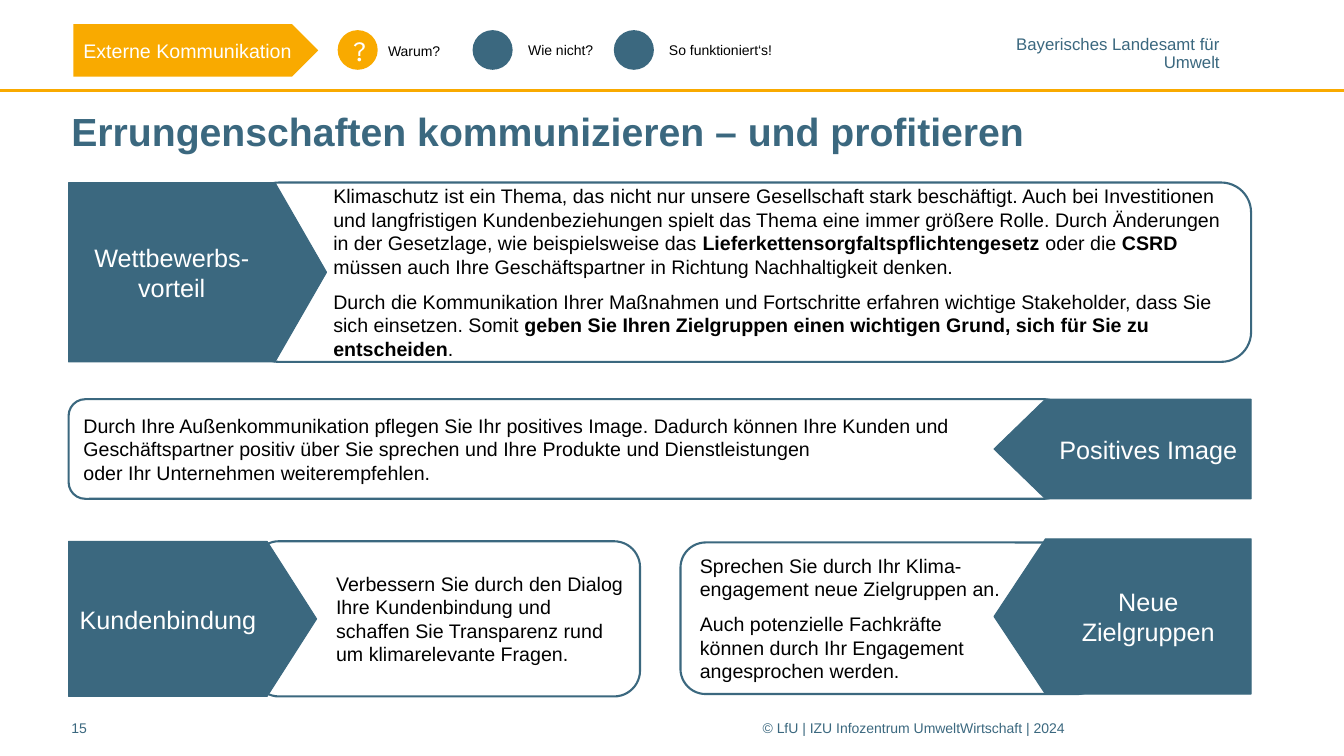
from lxml.etree import SubElement
from pptx import Presentation
from pptx.dml.color import RGBColor
from pptx.enum.shapes import MSO_CONNECTOR, MSO_SHAPE
from pptx.enum.text import MSO_ANCHOR, PP_ALIGN
from pptx.oxml.ns import qn
from pptx.util import Cm, Pt

BLUE = RGBColor(0x3B, 0x68, 0x7F)
GOLD = RGBColor(0xF9, 0xAA, 0x00)
WHITE = RGBColor(0xFF, 0xFF, 0xFF)
BLACK = RGBColor(0, 0, 0)


def write(shape, *lines, size=14, color=BLACK, font="Arial", bold=False,
          align=PP_ALIGN.LEFT, anchor=MSO_ANCHOR.MIDDLE,
          pad=(0.25, 0.13, 0.25, 0.13), after=0, lead=None, wrap=True):
    frame = shape.text_frame
    frame.word_wrap = wrap
    frame.vertical_anchor = anchor
    (frame.margin_left, frame.margin_top,
     frame.margin_right, frame.margin_bottom) = map(Cm, pad)
    for num, line in enumerate(lines):
        para = frame.add_paragraph() if num else frame.paragraphs[0]
        para.alignment = align
        para.space_after = Pt(after)
        para.line_spacing = lead
        for odd, part in enumerate(line.split("**")):
            for row, piece in enumerate(part.split("\n")):
                if row:
                    para.add_line_break()
                run = para.add_run()
                run.text = piece
                run.font.size = Pt(size)
                run.font.name = font
                run.font.bold = bold or odd % 2 == 1
                run.font.color.rgb = color


def label(slide, box, *lines, **style):
    write(slide.shapes.add_textbox(*map(Cm, box)), *lines, **style)


def draw(slide, kind, box, fill=None, line=None, width=1.5):
    shape = slide.shapes.add_shape(kind, *map(Cm, box))
    shape.shadow.inherit = False
    if fill is None:
        shape.fill.background()
    else:
        shape.fill.solid()
        shape.fill.fore_color.rgb = fill
    if line is None:
        shape.line.fill.background()
    else:
        shape.line.color.rgb = line
        shape.line.width = Pt(width)
    return shape


def header(slide, box):
    left, top, wide, high = box
    rule = slide.shapes.add_connector(
        MSO_CONNECTOR.STRAIGHT, Cm(left), Cm(top + high),
        Cm(left + wide), Cm(top + high))
    rule.line.color.rgb = GOLD
    rule.line.width = Pt(2)
    SubElement(rule.element.spPr, qn("a:effectLst"))

    label(slide, (left + 25.58, top + 0.94, 5.16, 0.86),
          "Bayerisches Landesamt für", "Umwelt", size=12, color=BLUE,
          align=PP_ALIGN.RIGHT, anchor=MSO_ANCHOR.TOP, pad=(0, 0, 0, 0),
          lead=0.85, wrap=False)
    flag = draw(slide, MSO_SHAPE.PENTAGON,
                (left + 1.85, top + 0.61, 6.17, 1.32), GOLD)
    write(flag, "Externe Kommunikation", color=WHITE)

    steps = [(8.51, 9.53, 0.94, "Warum?", "?", GOLD),
             (11.91, 13.06, 0.91, "Wie nicht?", "", BLUE),
             (15.47, 16.61, 0.91, "So funktioniert‘s!", "", BLUE)]
    for dot, text, drop, name, mark, fill in steps:
        disc = draw(slide, MSO_SHAPE.OVAL,
                    (left + dot, top + 0.76, 1.01, 1), fill)
        if mark:
            write(disc, mark, size=20, color=WHITE, font="League Spartan",
                  align=PP_ALIGN.CENTER)
        label(slide, (left + text, top + drop, 3.12, 0.68), name, size=10)


def title(slide, box, text):
    head = slide.shapes.title
    head.left, head.top, head.width, head.height = map(Cm, box)
    write(head, text, size=28, color=BLUE, bold=True, pad=(0, 0.13, 0, 0.13))


def panel(slide, box, name, *lines, tip, tuck, pad, right=False, lip=0):
    left, top, wide, high = box
    start = left if right else left + tuck
    body = draw(slide, MSO_SHAPE.ROUNDED_RECTANGLE,
                (start, top + lip, wide - tuck, high - lip), line=BLUE)
    write(body, *lines, pad=(pad[0], 0.13, pad[1], 0.13), after=8)

    mid = left + wide - tip / 2 if right else left + tip / 2
    arrow = draw(slide, MSO_SHAPE.FLOWCHART_OFFPAGE_CONNECTOR,
                 (mid - high / 2, top + (high - tip) / 2, high, tip),
                 BLUE, BLUE, 0.75)
    arrow.rotation = 90 if right else 270
    write(arrow, name, size=18, color=WHITE, align=PP_ALIGN.CENTER,
          pad=(0.25, 0.13, 0.25, 0.13))
    turn = arrow.text_frame._txBody.bodyPr
    turn.set("vert", "vert270" if right else "vert")


def footer(slide, box):
    left, top, wide, high = box
    style = dict(size=10, color=BLUE, anchor=MSO_ANCHOR.TOP,
                 pad=(0, 0.13, 0, 0.13))
    label(slide, (left, top, 1.78, high), "15", **style)
    label(slide, (left + 17.42, top, wide - 17.42, high),
          "© LfU | IZU Infozentrum UmweltWirtschaft | 2024", **style)


def main():
    deck = Presentation()
    deck.slide_width, deck.slide_height = Cm(33.87), Cm(19.05)
    slide = deck.slides.add_slide(deck.slide_layouts[5])
    header(slide, (0, 0, 33.87, 2.29))
    title(slide, (1.8, 2.59, 30.99, 1.4),
          "Errungenschaften kommunizieren – und profitieren")
    panel(slide, (1.73, 4.6, 29.8, 4.52), "Wettbewerbs-vorteil",
          "Klimaschutz ist ein Thema, das nicht nur unsere Gesellschaft stark "
          "beschäftigt. Auch bei Investitionen und langfristigen "
          "Kundenbeziehungen spielt das Thema eine immer größere Rolle. Durch "
          "Änderungen in der Gesetzlage, wie beispielsweise das "
          "**Lieferkettensorgfaltspflichtengesetz** oder die **CSRD** müssen "
          "auch Ihre Geschäftspartner in Richtung Nachhaltigkeit denken.",
          "Durch die Kommunikation Ihrer Maßnahmen und Fortschritte erfahren "
          "wichtige Stakeholder, dass Sie sich einsetzen. Somit** geben Sie "
          "Ihren Zielgruppen einen wichtigen Grund, sich für Sie zu "
          "entscheiden**.",
          tip=6.5, tuck=4.55, pad=(1.9, 0.2))
    panel(slide, (1.73, 10.06, 29.8, 2.51), "Positives Image",
          "Durch Ihre Außenkommunikation pflegen Sie Ihr positives Image. "
          "Dadurch können Ihre Kunden und Geschäftspartner positiv über Sie "
          "sprechen und Ihre Produkte und Dienstleistungen\n"
          "oder Ihr Unternehmen weiterempfehlen.",
          tip=6.48, tuck=4.78, pad=(0.25, 1.6), right=True)
    panel(slide, (1.73, 13.64, 14.4, 3.91), "Kundenbindung",
          "Verbessern Sie durch den Dialog Ihre Kundenbindung und schaffen "
          "Sie Transparenz rund um klimarelevante Fragen.",
          tip=6.25, tuck=4.65, pad=(1.9, 0.2))
    panel(slide, (17.15, 13.58, 14.38, 3.91), "Neue Zielgruppen",
          "Sprechen Sie durch Ihr Klima-engagement neue Zielgruppen an.",
          "Auch potenzielle Fachkräfte\nkönnen durch Ihr Engagement "
          "angesprochen werden.",
          tip=6.48, tuck=3.74, pad=(0.3, 1), right=True, lip=0.09)
    footer(slide, (1.8, 17.99, 31.04, 0.79))
    deck.save("out.pptx")


if __name__ == "__main__":
    main()
